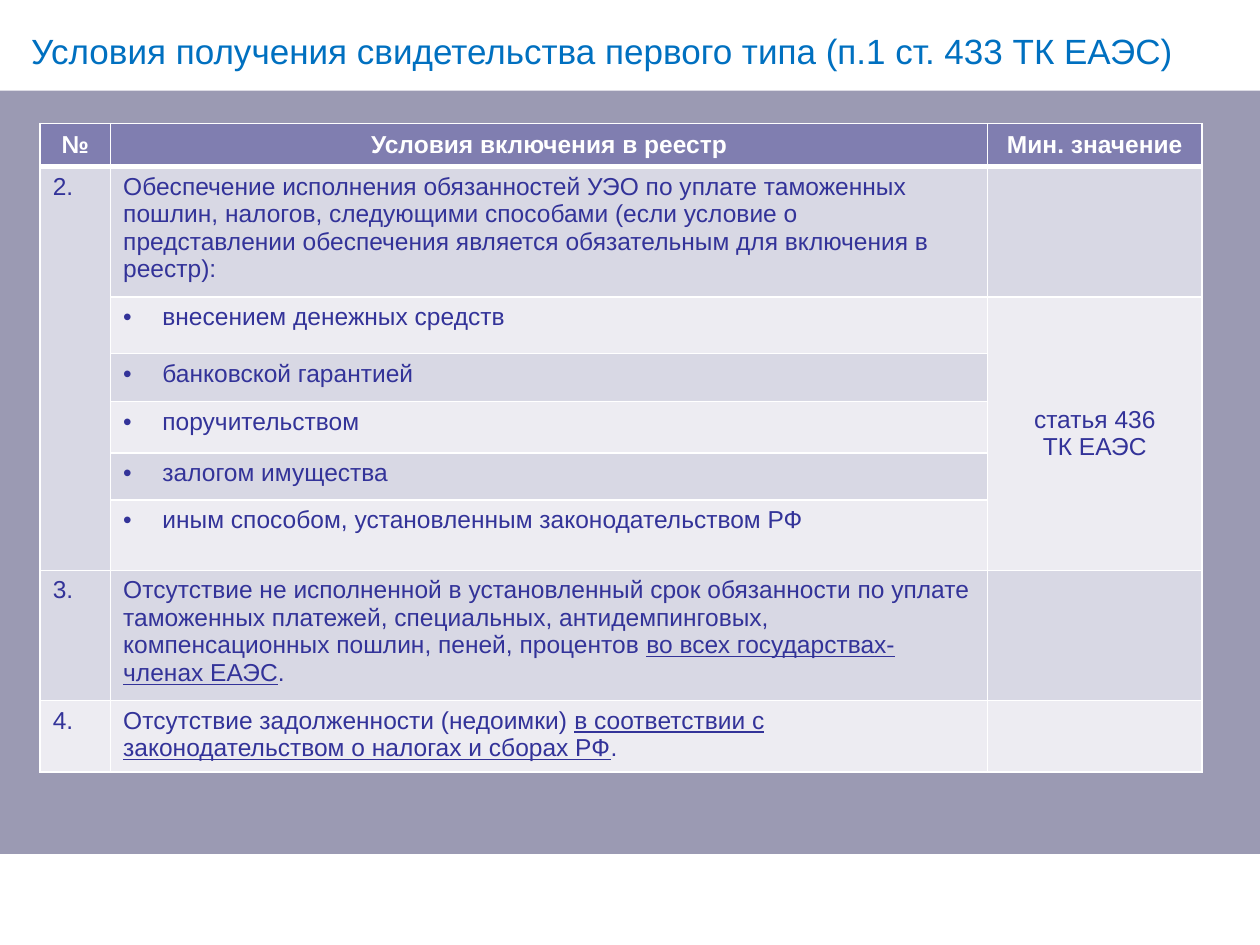
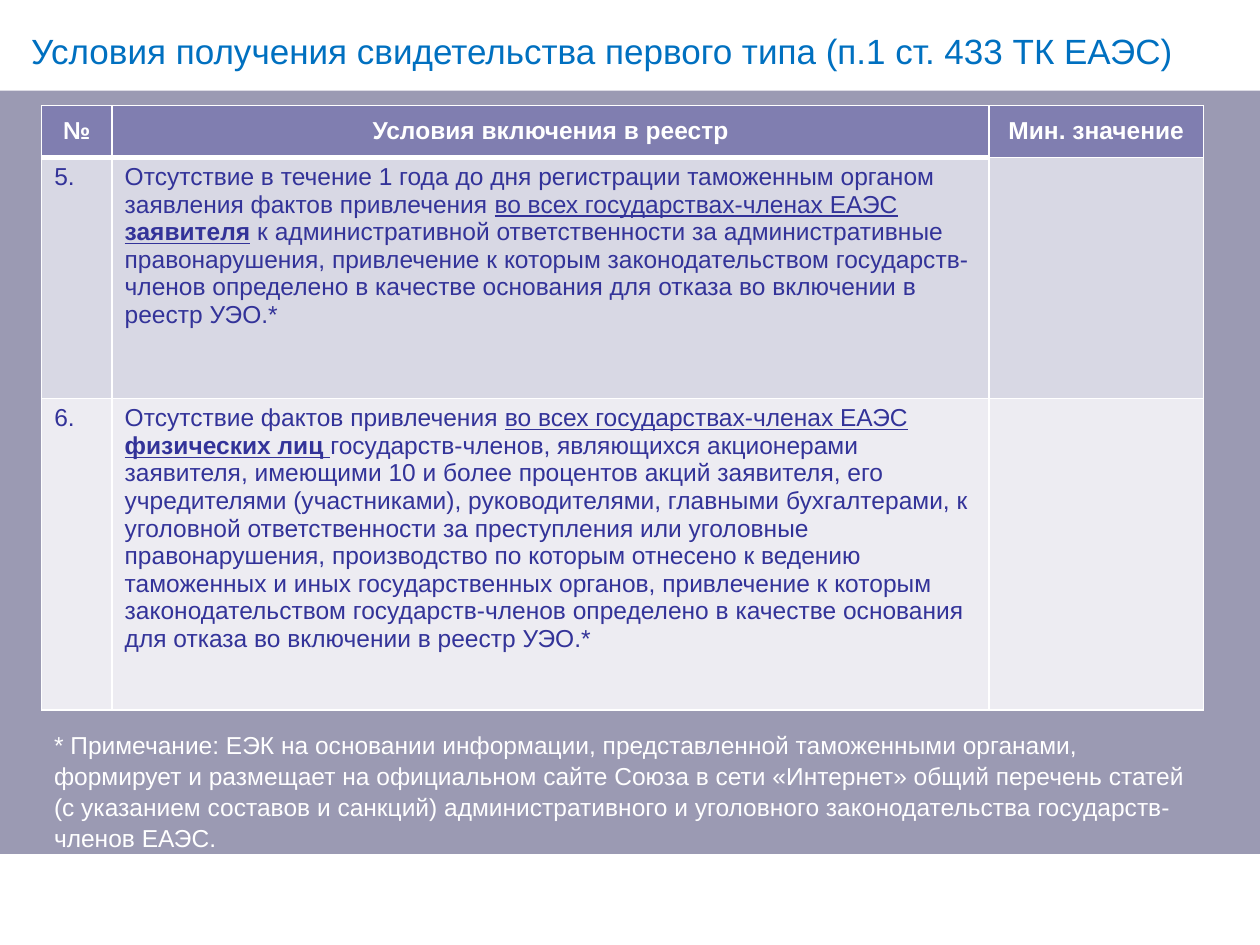
from lxml import etree
from pptx import Presentation
from pptx import util as u
from pptx.dml.color import RGBColor
from pptx.enum import shapes, text
from pptx.oxml import ns

Cm, Pt = u.Cm, u.Pt

WHITE = RGBColor(0xFF, 0xFF, 0xFF)
BACKGROUND = RGBColor(0x9B, 0x9A, 0xB3)
HEADER_FILL = RGBColor(0x80, 0x7E, 0xB0)
ROW_FILLS = (RGBColor(0xD8, 0xD8, 0xE4), RGBColor(0xED, 0xEC, 0xF2))
INK = RGBColor(0x33, 0x33, 0x99)
TITLE_COLOR = RGBColor(0x00, 0x70, 0xC0)

FONT = "Arial"
BODY_SIZE = 14
SLIDE_WIDTH, SLIDE_HEIGHT, BAND_HEIGHT = 25.4, 19.05, 1.83
COLUMN_WIDTHS = (1.42, 17.68, 4.32)
BULLET_INDENT = Cm(0.79)

TITLE = "Условия получения свидетельства первого типа (п.1 ст. 433 ТК ЕАЭС)"
HEADER = ("№", "Условия включения в реестр", "Мин. значение")
BULLET = "• "
EVERYWHERE = "во всех государствах-членах ЕАЭС"

# A condition is a list of (words, style) runs: "u" underlined, "b" bold.
SECURITY_ROWS = [
    ("2.", [("Обеспечение исполнения обязанностей УЭО по уплате таможенных пошлин, "
             "налогов, следующими способами (если условие о представлении обеспечения "
             "является обязательным для включения в реестр):", "")], ""),
    ("", [(BULLET + "внесением денежных средств", "")], "статья 436\nТК ЕАЭС"),
    ("", [(BULLET + "банковской гарантией", "")], ""),
    ("", [(BULLET + "поручительством", "")], ""),
    ("", [(BULLET + "залогом имущества", "")], ""),
    ("", [(BULLET + "иным способом, установленным законодательством РФ", "")], ""),
    ("3.", [("Отсутствие не исполненной в установленный срок обязанности по уплате "
             "таможенных платежей, специальных, антидемпинговых, компенсационных пошлин, "
             "пеней, процентов ", ""), (EVERYWHERE, "u"), (".", "")], ""),
    ("4.", [("Отсутствие задолженности (недоимки) ", ""),
            ("в соответствии с законодательством о налогах и сборах РФ", "u"),
            (".", "")], ""),
]
LIABILITY_ROWS = [
    ("5.", [("Отсутствие в течение 1 года до дня регистрации таможенным органом заявления "
             "фактов привлечения ", ""), (EVERYWHERE + " ", "u"), ("заявителя", "bu"),
            (" к административной ответственности за административные правонарушения, "
             "привлечение к которым законодательством государств-членов определено в "
             "качестве основания для отказа во включении в реестр УЭО.*", "")], ""),
    ("6.", [("Отсутствие фактов привлечения ", ""), (EVERYWHERE + " ", "u"),
            ("физических лиц ", "bu"),
            ("государств-членов, являющихся акционерами заявителя, имеющими 10 и более "
             "процентов акций заявителя, его учредителями (участниками), руководителями, "
             "главными бухгалтерами, к уголовной ответственности за преступления или "
             "уголовные правонарушения, производство по которым отнесено к ведению "
             "таможенных и иных государственных органов, привлечение к которым "
             "законодательством государств-членов определено в качестве основания для "
             "отказа во включении в реестр УЭО.*", "")], ""),
]
NOTE = ("* Примечание: ЕЭК на основании информации, представленной таможенными органами, "
        "формирует и размещает на официальном сайте Союза в сети «Интернет» общий перечень "
        "статей (с указанием составов и санкций) административного и уголовного "
        "законодательства государств-членов ЕАЭС.")


def add_span(para, words, color, size=BODY_SIZE, style=""):
    span = para.add_run()
    span.text = words
    font = span.font
    font.name, font.size, font.color.rgb = FONT, Pt(size), color
    font.bold = "b" in style
    font.underline = "u" in style


def add_text(page, left, top, width, words, color, size):
    box = page.shapes.add_textbox(Cm(left), Cm(top), Cm(width), Cm(1.32))
    box.text_frame.word_wrap = True
    para = box.text_frame.paragraphs[0]
    para.line_spacing = 1.06
    add_span(para, words, color, size)


def add_page(deck):
    """Add a slide with the shared background, white bands and title."""
    page = deck.slides.add_slide(deck.slide_layouts[6])
    page.background.fill.solid()
    page.background.fill.fore_color.rgb = BACKGROUND
    for top in (0, SLIDE_HEIGHT - BAND_HEIGHT):
        band = page.shapes.add_shape(shapes.MSO_SHAPE.RECTANGLE, 0, Cm(top),
                                     Cm(SLIDE_WIDTH), Cm(BAND_HEIGHT))
        band.shadow.inherit = False
        band.fill.solid()
        band.fill.fore_color.rgb = WHITE
        band.line.fill.background()
    add_text(page, 0.38, 0.43, 24.28, TITLE, TITLE_COLOR, 20)
    return page


def set_bullet(para):
    properties = para._p.get_or_add_pPr()
    properties.set("marL", str(BULLET_INDENT))
    properties.set("indent", str(-BULLET_INDENT))
    etree.SubElement(properties, ns.qn("a:buFont")).set("typeface", FONT)
    etree.SubElement(properties, ns.qn("a:buChar")).set("char", BULLET.strip())


def style_cell(cell, fill, top=1, bottom=1):
    """Fill the cell and give it white borders; top and bottom are in points."""
    properties = cell._tc.get_or_add_tcPr()
    for side, width in (("L", 1), ("R", 1), ("T", top), ("B", bottom)):
        line = etree.SubElement(properties, ns.qn("a:ln" + side), w=str(Pt(width)))
        solid = etree.SubElement(line, ns.qn("a:solidFill"))
        etree.SubElement(solid, ns.qn("a:srgbClr"), val=str(WHITE))
    cell.fill.solid()
    cell.fill.fore_color.rgb = fill


def write_centred(cell, words, color, style=""):
    cell.vertical_anchor = text.MSO_ANCHOR.MIDDLE
    frame = cell.text_frame
    for index, line in enumerate(words.split("\n")):
        para = frame.add_paragraph() if index else frame.paragraphs[0]
        para.alignment = text.PP_ALIGN.CENTER
        add_span(para, line, color, style=style)


def write_condition(cell, spans):
    para = cell.text_frame.paragraphs[0]
    if spans[0][0].startswith(BULLET):
        set_bullet(para)
    for words, style in spans:
        add_span(para, words.removeprefix(BULLET), INK, style=style)


def add_conditions(page, left, top, heights, rows, rules=(3, 3, 3)):
    """Add the table of conditions; rules are the line widths under the header."""
    table = page.shapes.add_table(len(heights), len(COLUMN_WIDTHS), Cm(left), Cm(top),
                                  Cm(sum(COLUMN_WIDTHS)), Cm(sum(heights))).table
    table.first_row = table.horz_banding = False
    for column, width in zip(table.columns, COLUMN_WIDTHS):
        column.width = Cm(width)
    for row, height in zip(table.rows, heights):
        row.height = Cm(height)

    for column, (words, rule) in enumerate(zip(HEADER, rules)):
        cell = table.cell(0, column)
        style_cell(cell, HEADER_FILL, bottom=rule)
        write_centred(cell, words, WHITE, "b")
    for index, (number, condition, minimum) in enumerate(rows, 1):
        cells = table.rows[index].cells
        for cell, rule in zip(cells, rules):
            style_cell(cell, ROW_FILLS[(index - 1) % 2], top=rule if index == 1 else 1)
        if number:
            write_condition(cells[0], [(number, "")])
        write_condition(cells[1], condition)
        if minimum:
            write_centred(cells[2], minimum, INK)
    return table


def main():
    deck = Presentation()
    deck.slide_width, deck.slide_height = Cm(SLIDE_WIDTH), Cm(SLIDE_HEIGHT)

    page = add_page(deck)
    heights = (0.87, 2.48, 1.14, 0.97, 1.04, 0.94, 1.42, 2.47, 1.4)
    table = add_conditions(page, 0.81, 2.49, heights, SECURITY_ROWS)
    table.cell(1, 0).merge(table.cell(6, 0))
    table.cell(2, 2).merge(table.cell(6, 2))

    page = add_page(deck)
    add_conditions(page, 0.84, 2.13, (1.04, 4.86, 6.28), LIABILITY_ROWS, rules=(3, 3, 1))
    add_text(page, 0.84, 14.55, 23.42, NOTE, WHITE, BODY_SIZE)

    deck.save("out.pptx")


if __name__ == "__main__":
    main()
